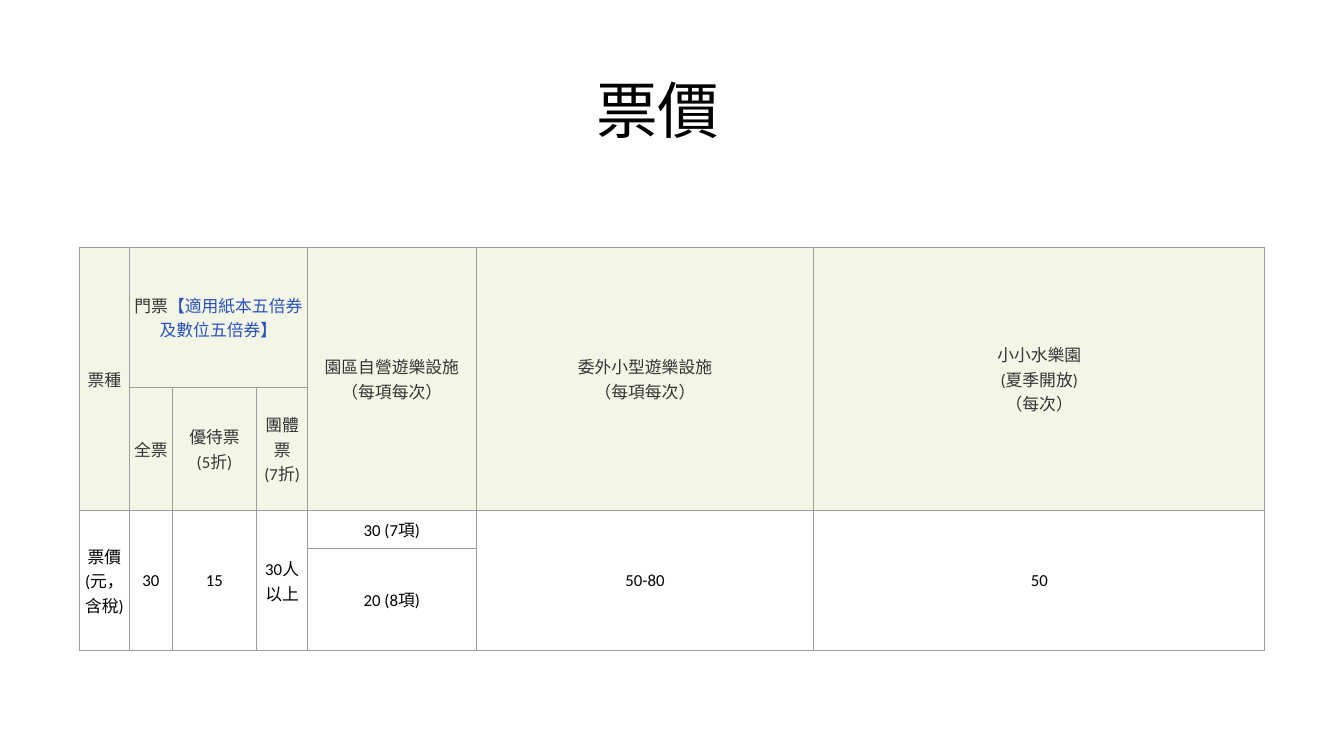
from copy import deepcopy
from lxml.etree import SubElement
from pptx import Presentation
from pptx.dml.color import RGBColor
from pptx.enum.text import MSO_ANCHOR as Anchor, PP_ALIGN as Align
from pptx.oxml.ns import qn
from pptx.util import Cm, Pt

BLACK = RGBColor(0, 0, 0)
GREY = RGBColor(0x34, 0x34, 0x34)
BLUE = RGBColor(0x2A, 0x52, 0xBE)
CREAM = RGBColor(0xF3, 0xF6, 0xE7)
RULE = RGBColor(0x9C, 0x9C, 0x9C)

TITLE = "票價"
WIDTHS = [1.26, 1.08, 2.13, 1.28, 4.25, 8.51, 11.36]
HEIGHTS = [3.53, 3.1, 0.95, 2.59]
HEAD_ROWS = 2
CELLS = [
    ["票種", "門票", "", "", "園區自營遊樂設施\n（每項每次）",
     "委外小型遊樂設施\n（每項每次）", "小小水樂園\n(夏季開放)\n（每次）"],
    ["", "全票", "優待票\n(5折)", "團體票\n(7折)", "", "", ""],
    ["票價\n(元，含稅)", "30", "15", "30人\n以上", "30 (7項)", "50-80", "50"],
    ["", "", "", "", "20 (8項)", "", ""],
]
NOTE = "【適用紙本五倍券及數位五倍券】"
TALL = {0: [0, 4, 5, 6], 2: [0, 1, 2, 3, 5, 6]}
INSETS = {"margin_left": Cm(0.05), "margin_right": Cm(0.05),
          "margin_top": Cm(0.05), "margin_bottom": Cm(0.05),
          "vertical_anchor": Anchor.MIDDLE}


def style(font, size, color):
    for key, value in {"name": "Calibri", "size": Pt(size)}.items():
        setattr(font, key, value)
    font.color.rgb = color


def border(cell):
    props = cell._tc.get_or_add_tcPr()
    for side in ("a:lnL", "a:lnR", "a:lnT", "a:lnB"):
        line = SubElement(props, qn(side), w=str(Pt(0.75)))
        fill = SubElement(line, qn("a:solidFill"))
        SubElement(fill, qn("a:srgbClr"), val=str(RULE))


def write(cell, text, color):
    para = cell.text_frame.paragraphs[0]
    para.text = text
    para.alignment = Align.CENTER
    for run in para.runs:
        style(run.font, 12, color)
    for gap in para._p.findall(qn("a:br")):
        gap.append(deepcopy(para.runs[0]._r.rPr))


deck = Presentation()
deck.slide_width, deck.slide_height = Cm(33.87), Cm(19.05)
slide = deck.slides.add_slide(deck.slide_layouts[6])

box = slide.shapes.add_textbox(Cm(2.33), Cm(1.01), Cm(29.21), Cm(3.68))
frame = box.text_frame
for key, value in {"word_wrap": True, "vertical_anchor": Anchor.MIDDLE,
                   "margin_left": Cm(12.7)}.items():
    setattr(frame, key, value)
head = frame.paragraphs[0]
head.text = TITLE
head.line_spacing = 0.9
style(head.runs[0].font, 44, BLACK)

table = slide.shapes.add_table(len(HEIGHTS), len(WIDTHS), Cm(2), Cm(6.23),
                               Cm(sum(WIDTHS)), Cm(sum(HEIGHTS))).table
table.first_row = table.horz_banding = False
for col, width in zip(table.columns, WIDTHS):
    col.width = Cm(width)
for row, height in zip(table.rows, HEIGHTS):
    row.height = Cm(height)

for r, texts in enumerate(CELLS):
    top = r < HEAD_ROWS
    for c, text in enumerate(texts):
        cell = table.cell(r, c)
        for key, value in INSETS.items():
            setattr(cell, key, value)
        border(cell)
        if top:
            cell.fill.solid()
            cell.fill.fore_color.rgb = CREAM
        else:
            cell.fill.background()
        if text:
            write(cell, text, GREY if top else BLACK)

note = table.cell(0, 1).text_frame.paragraphs[0].add_run()
note.text = NOTE
style(note.font, 12, BLUE)

table.cell(0, 1).merge(table.cell(0, 3))
for r, cols in TALL.items():
    for c in cols:
        table.cell(r, c).merge(table.cell(r + 1, c))

deck.save("out.pptx")
